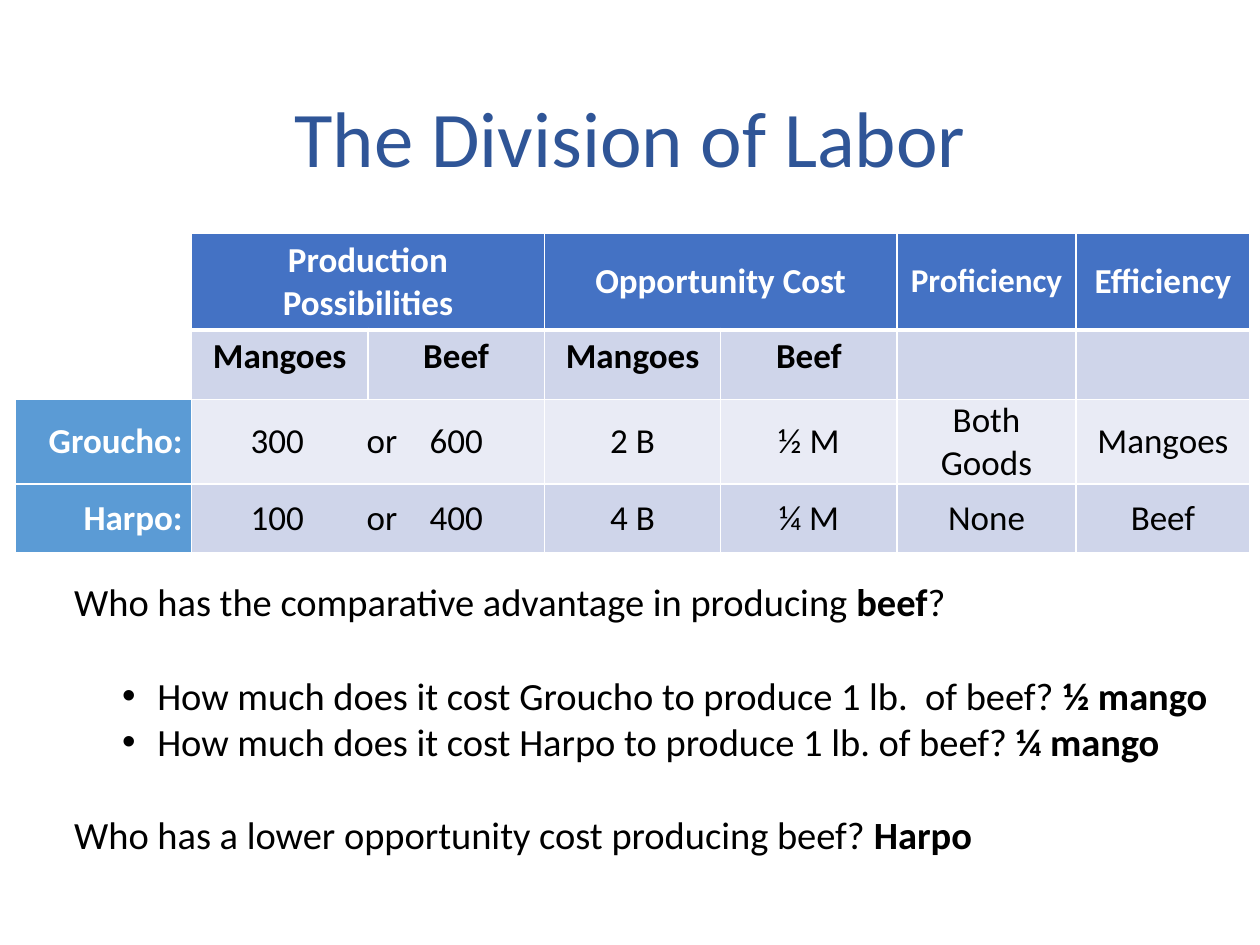
"""Build the Division of Labor slide with its opportunity cost table."""
from lxml import etree
from pptx import Presentation
from pptx.dml.color import RGBColor
from pptx.enum.text import MSO_ANCHOR, MSO_AUTO_SIZE, PP_ALIGN
from pptx.oxml.ns import qn
from pptx.util import Inches, Pt

CENTER, RIGHT = PP_ALIGN.CENTER, PP_ALIGN.RIGHT
TOP, MIDDLE = MSO_ANCHOR.TOP, MSO_ANCHOR.MIDDLE
FIT_SHAPE = MSO_AUTO_SIZE.SHAPE_TO_FIT_TEXT
FONT = "Calibri"
COLORS = {
    "white": "FFFFFF", "black": "000000", "title": "2F5597", "header": "4472C4",
    "name": "5B9BD5", "dark_band": "CFD5EA", "light_band": "E9EBF5",
}


def add_run(p, text, size, color="black", bold=False):
    r = p.add_run()
    r.text = text
    r.font.name, r.font.size, r.font.bold = FONT, Pt(size), bold
    r.font.color.rgb = RGBColor.from_string(COLORS[color])


def style_cell(cell, fill, top, bottom):
    cell.fill.solid()
    cell.fill.fore_color.rgb = RGBColor.from_string(COLORS[fill])
    tc_pr = cell._tc.get_or_add_tcPr()
    widths = {"a:lnL": 1, "a:lnR": 1, "a:lnT": top, "a:lnB": bottom}
    for i, (tag, width) in enumerate(widths.items()):
        ln = etree.Element(qn(tag), w=str(Pt(width)))
        solid = etree.SubElement(ln, qn("a:solidFill"))
        etree.SubElement(solid, qn("a:srgbClr"), val=COLORS["white"])
        tc_pr.insert(i, ln)


prs = Presentation()
prs.slide_width, prs.slide_height = Inches(10), Inches(7.5)
s = prs.slides.add_slide(prs.slide_layouts[6])

title = s.shapes.add_textbox(Inches(0.69), Inches(0.4), Inches(8.62), Inches(1.45))
title.fill.solid()
title.fill.fore_color.rgb = RGBColor.from_string(COLORS["white"])
tf = title.text_frame
tf.word_wrap, tf.vertical_anchor = True, MIDDLE
p = tf.paragraphs[0]
p.alignment, p.line_spacing = CENTER, 0.9
add_run(p, "The Division of Labor", 45, "title")

rows = [
    ["", "Production Possibilities", "", "Opportunity Cost", "", "Proficiency", "Efficiency"],
    ["", "Mangoes", "Beef", "Mangoes", "Beef", "", ""],
    ["Groucho:", "300\tor\t600", "", "2 B", "½ M", "Both Goods", "Mangoes"],
    ["Harpo:", "100\tor\t400", "", "4 B", "¼ M", "None", "Beef"],
]
col_widths = [1.4] * 5 + [1.42, 1.38]
row_heights = [0.77, 0.55, 0.67, 0.55]
row_fills = ["header", "dark_band", "light_band", "dark_band"]

table = s.shapes.add_table(4, 7, Inches(0.12), Inches(1.85), Inches(9.78), Inches(2.54)).table
table.first_row = table.horz_banding = False
for col, width in zip(table.columns, col_widths):
    col.width = Inches(width)
for row, height in zip(table.rows, row_heights):
    row.height = Inches(height)

for i, texts in enumerate(rows):
    for j, text in enumerate(texts):
        cell = table.cell(i, j)
        is_name = j == 0
        is_data = i > 1 and not is_name
        fill = row_fills[i]
        if is_name:
            fill = "name" if text else "white"
        style_cell(cell, fill, 3 if i == 1 else 1, 3 if i == 0 else 1)
        cell.vertical_anchor = TOP if i == 1 else MIDDLE
        cell.margin_left = cell.margin_right = Inches(0.06 if is_data else 0.07)
        cell.margin_top = cell.margin_bottom = Inches(0 if is_data else 0.04)
        if not text:
            continue
        p = cell.text_frame.paragraphs[0]
        p.alignment = RIGHT if is_name else CENTER
        if "\t" in text:
            p.alignment = PP_ALIGN.LEFT
            cell.margin_left = Inches(0.47)
            tabs = etree.SubElement(p._p.get_or_add_pPr(), qn("a:tabLst"))
            for stop in (0.92, 1.42):
                etree.SubElement(tabs, qn("a:tab"), pos=str(Inches(stop)), algn="l")
        color = "white" if i == 0 or is_name else "black"
        add_run(p, text, 19 if text == "Proficiency" else 20, color, not is_data)

for i, j in ((0, 1), (0, 3), (2, 1), (3, 1)):
    table.cell(i, j).merge(table.cell(i, j + 1))

questions = [
    (False, 0, [("Who has the comparative advantage in producing ", False), ("beef", True), ("?", False)]),
    (True, 27, [("How much does it cost Groucho to produce 1 lb.  of beef? ", False), ("½ mango", True)]),
    (True, 0, [("How much does it cost Harpo to produce 1 lb. of beef? ", False), ("¼ mango", True)]),
    (False, 27, [("Who has a lower opportunity cost producing beef? ", False), ("Harpo", True)]),
]
box = s.shapes.add_textbox(Inches(0.49), Inches(4.54), Inches(9.41), Inches(2.32))
tf = box.text_frame
tf.word_wrap, tf.auto_size = True, FIT_SHAPE
for i, (bulleted, gap, runs) in enumerate(questions):
    p = tf.add_paragraph() if i else tf.paragraphs[0]
    p.space_before = Pt(gap)
    if bulleted:
        p.level = 1
        p_pr = p._p.get_or_add_pPr()
        p_pr.set("marL", str(Inches(0.66)))
        p_pr.set("indent", str(Inches(-0.28)))
        etree.SubElement(p_pr, qn("a:buFont"), typeface="Arial")
        etree.SubElement(p_pr, qn("a:buChar"), char="•")
    for text, bold in runs:
        add_run(p, text, 22, bold=bold)

prs.save("out.pptx")
